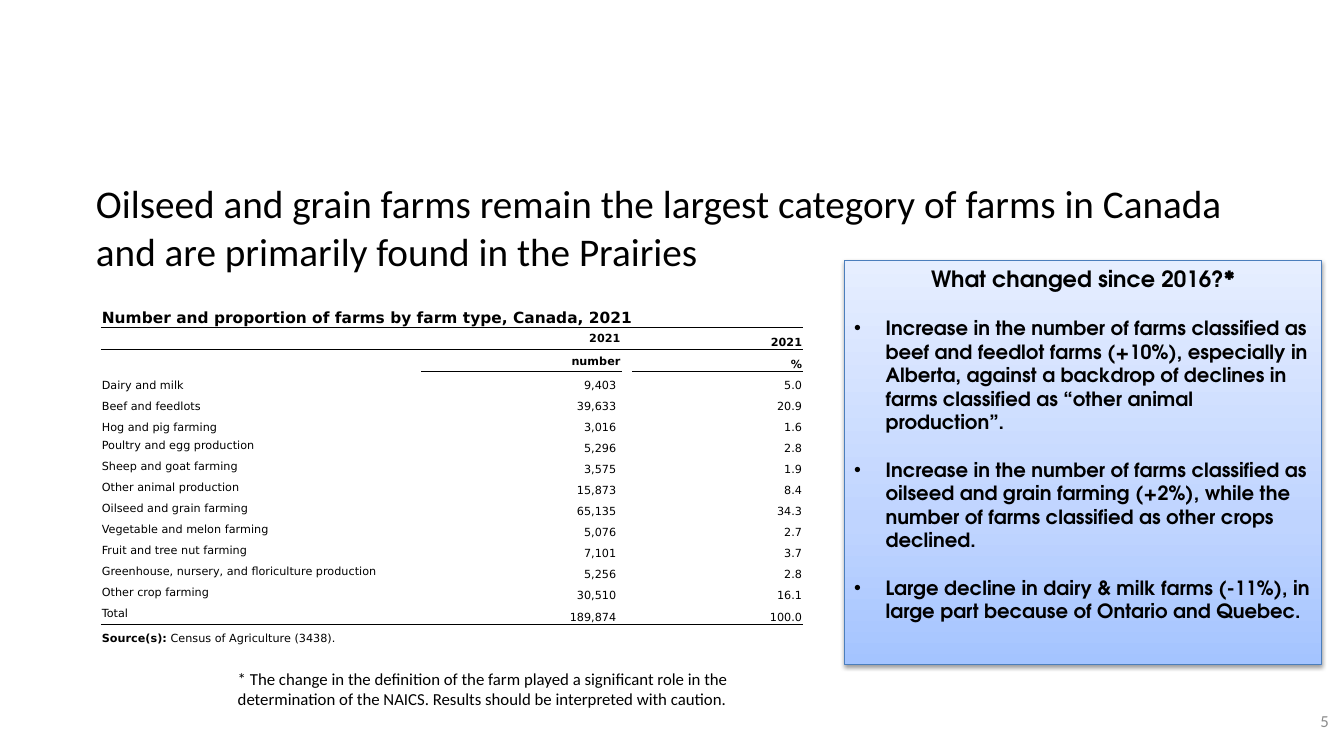
import copy
import dataclasses

import lxml.etree
import pptx
import pptx.dml.color
import pptx.enum.shapes
import pptx.enum.text
import pptx.oxml.ns
import pptx.util

PX = 9525
ALIGN = pptx.enum.text.PP_ALIGN
ANCHOR = pptx.enum.text.MSO_ANCHOR
QN = pptx.oxml.ns.qn


@dataclasses.dataclass(frozen=True)
class Theme:
    body: str = "Calibri"
    grid: str = "DejaVu Sans"
    panel: str = "TeX Gyre Adventor"
    ink: str = "000000"
    paper: str = "FFFFFF"
    gray: str = "8C8C8C"
    edge: str = "4B7EBC"
    fade: tuple = ((0, "A4C4FF"), (0.35, "BFD4FF"), (1, "E6EEFF"))
    title: int = 28
    head: int = 16
    point: int = 14
    note: int = 12
    label: int = 11
    cell: int = 8


THEME = Theme()

TITLE = ("Oilseed and grain farms remain the largest category of farms in Canada "
         "and are primarily found in the Prairies")
NOTE = ("* The change in the definition of the farm played a significant role in the "
        "determination of the NAICS. Results should be interpreted with caution.")
POINTS = (
    "Increase in the number of farms classified as beef and feedlot farms (+10%), "
    "especially in Alberta, against a backdrop of declines in farms classified as "
    "“other animal production”.",
    "Increase in the number of farms classified as oilseed and grain farming (+2%), "
    "while the number of farms classified as other crops declined.",
    "Large decline in dairy & milk farms (-11%), in large part because of Ontario "
    "and Quebec.",
)
FARMS = (
    ("Dairy and milk", "9,403", "5.0"),
    ("Beef and feedlots", "39,633", "20.9"),
    ("Hog and pig farming", "3,016", "1.6"),
    ("Poultry and egg production", "5,296", "2.8"),
    ("Sheep and goat farming", "3,575", "1.9"),
    ("Other animal production", "15,873", "8.4"),
    ("Oilseed and grain farming", "65,135", "34.3"),
    ("Vegetable and melon farming", "5,076", "2.7"),
    ("Fruit and tree nut farming", "7,101", "3.7"),
    ("Greenhouse, nursery, and floriculture production", "5,256", "2.8"),
    ("Other crop farming", "30,510", "16.1"),
    ("Total", "189,874", "100.0"),
)
COLS = (305, 191, 10, 163)
ROWS = (46, 21, 21) + (20,) * 11 + (21, 20)


def box(*sides):
    return [side * PX for side in sides]


def rgb(code):
    return pptx.dml.color.RGBColor.from_string(code)


def node(parent, tag, **attrs):
    return lxml.etree.SubElement(parent, QN(tag), attrs)


def style(run, face, size, color=THEME.ink, bold=False):
    font = run.font
    font.name, font.size, font.bold = face, pptx.util.Pt(size), bold
    font.color.rgb = rgb(color)


def add_text(slide, place, text, size, color=THEME.ink, align=ALIGN.LEFT, anchor=ANCHOR.TOP):
    frame = slide.shapes.add_textbox(*box(*place)).text_frame
    frame.word_wrap = True
    frame.vertical_anchor = anchor
    frame.text = text
    para = frame.paragraphs[0]
    para.alignment = align
    style(para.runs[0], THEME.body, size, color)


def add_fade(fill, stops):
    """Fill upward through any number of colour stops."""
    fill.gradient()
    fill.gradient_angle = 90
    first = fill.gradient_stops[0]._gs
    for _ in stops[2:]:
        first.addnext(copy.deepcopy(first))
    for stop, (place, color) in zip(fill.gradient_stops, stops):
        stop.color.rgb = rgb(color)
        stop.position = place


def add_shadow(shape):
    shape.shadow.inherit = False
    effects = shape._element.spPr.find(QN("a:effectLst"))
    outer = node(effects, "a:outerShdw", blurRad="40000", dist="20000",
                 dir="5400000", rotWithShape="0")
    color = node(outer, "a:srgbClr", val=THEME.ink)
    node(color, "a:alpha", val="38000")


def add_bullet(para):
    props = para._p.get_or_add_pPr()
    props.set("marL", str(30 * PX))
    props.set("indent", str(-30 * PX))
    node(props, "a:buFont", typeface="Arial")
    node(props, "a:buChar", char="•")


def add_panel(slide, place, head, points):
    shape = slide.shapes.add_shape(pptx.enum.shapes.MSO_SHAPE.RECTANGLE, *box(*place))
    add_fade(shape.fill, THEME.fade)
    shape.line.color.rgb = rgb(THEME.edge)
    shape.line.width = pptx.util.Pt(0.75)
    add_shadow(shape)
    frame = shape.text_frame
    frame.word_wrap = True
    frame.vertical_anchor = ANCHOR.TOP
    frame.text = head
    first = frame.paragraphs[0]
    first.alignment = ALIGN.CENTER
    style(first.runs[0], THEME.panel, THEME.head, bold=True)
    for point in points:
        para = frame.add_paragraph()
        para.text = point
        para.alignment = ALIGN.LEFT
        add_bullet(para)
        para.space_before = pptx.util.Pt(17)
        style(para.runs[0], THEME.panel, THEME.point, bold=True)


def put(cell, text, size=THEME.cell, bold=False, align=ALIGN.LEFT,
        anchor=ANCHOR.BOTTOM, right=1):
    cell.text = text
    cell.vertical_anchor = anchor
    cell.margin_right = right * PX
    para = cell.text_frame.paragraphs[0]
    para.alignment = align
    style(para.runs[0], THEME.grid, size, bold=bold)


def add_rule(cell):
    """Draw a black line under a cell."""
    props = cell._tc.get_or_add_tcPr()
    line = lxml.etree.Element(QN("a:lnB"), w="12700")
    color = node(node(line, "a:solidFill"), "a:srgbClr", val=THEME.ink)
    color.set("val", THEME.ink)
    props.insert(0, line)


def add_grid(slide, left, top):
    """Make an empty white table with no style of its own."""
    frame = slide.shapes.add_table(len(ROWS), len(COLS),
                                   *box(left, top, sum(COLS), sum(ROWS)))
    table = frame.table
    table.first_row = table.horz_banding = False
    table._tbl.tblPr.find(QN("a:tableStyleId")).text = "{2D5ABB26-0587-4C30-8999-92F81FD0307C}"
    for col, width in zip(table.columns, COLS):
        col.width = width * PX
    for row, height in zip(table.rows, ROWS):
        row.height = height * PX
    for cell in table.iter_cells():
        cell.fill.solid()
        cell.fill.fore_color.rgb = rgb(THEME.paper)
        cell.margin_left = cell.margin_right = cell.margin_top = PX
        cell.margin_bottom = 0
        end = cell.text_frame.paragraphs[0]._p.get_or_add_endParaRPr()
        end.set("sz", str(THEME.cell * 100))
    return table


def add_farms(slide, left, top):
    table = add_grid(slide, left, top)
    last = len(ROWS) - 1
    table.cell(0, 0).merge(table.cell(0, 3))
    table.cell(last, 0).merge(table.cell(last, 1))
    put(table.cell(0, 0), "Number and proportion of farms by farm type, Canada, 2021",
        THEME.label, True)
    for row, (count, share) in enumerate((("2021", "number"), ("2021", "%"))and
                                         (("2021", "2021"), ("number", "%")), 1):
        put(table.cell(row, 1), count, bold=True, align=ALIGN.RIGHT, anchor=ANCHOR.MIDDLE)
        put(table.cell(row, 3), share, bold=True, align=ALIGN.RIGHT)
    for row, (name, count, share) in enumerate(FARMS, 3):
        put(table.cell(row, 0), name, anchor=ANCHOR.BOTTOM if row < 6 else ANCHOR.MIDDLE)
        put(table.cell(row, 1), count, align=ALIGN.RIGHT, right=5)
        put(table.cell(row, 3), share, align=ALIGN.RIGHT)
    source = table.cell(last, 0)
    put(source, "Source(s):", bold=True)
    rest = source.text_frame.paragraphs[0].add_run()
    rest.text = " Census of Agriculture (3438)."
    style(rest, THEME.grid, THEME.cell)
    for row, cols in ((0, range(4)), (1, range(4)), (2, (1, 3)), (last - 1, range(4))):
        for col in cols:
            add_rule(table.cell(row, col))


def main():
    deck = pptx.Presentation()
    deck.slide_width, deck.slide_height = box(1280, 720)
    slide = deck.slides.add_slide(deck.slide_layouts[6])
    add_text(slide, (82, 184, 1112, 64), TITLE, THEME.title, anchor=ANCHOR.MIDDLE)
    add_text(slide, (976, 667, 299, 38), "5", THEME.note, THEME.gray,
             ALIGN.RIGHT, ANCHOR.MIDDLE)
    add_panel(slide, (804, 248, 455, 385), "What changed since 2016?*", POINTS)
    add_text(slide, (217, 632, 510, 48), NOTE, THEME.note)
    add_farms(slide, 96, 266)
    deck.save("out.pptx")


if __name__ == "__main__":
    main()
